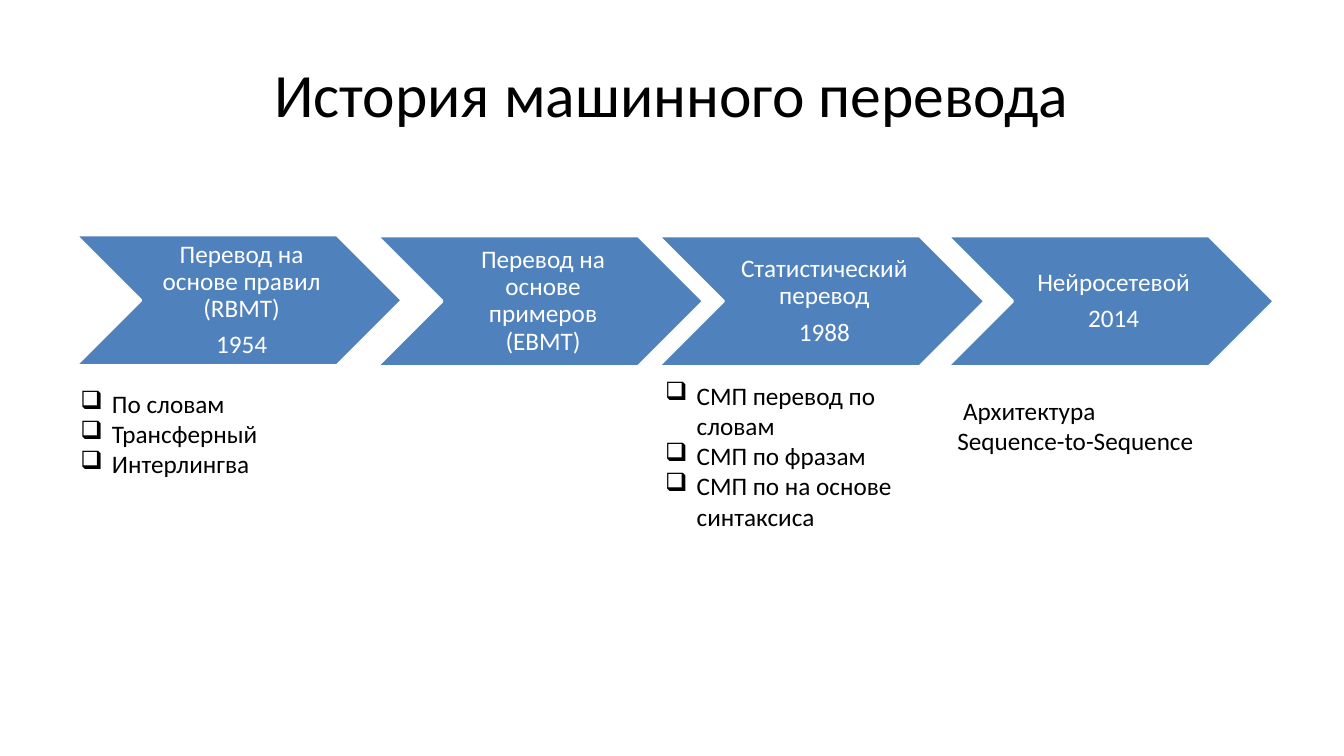
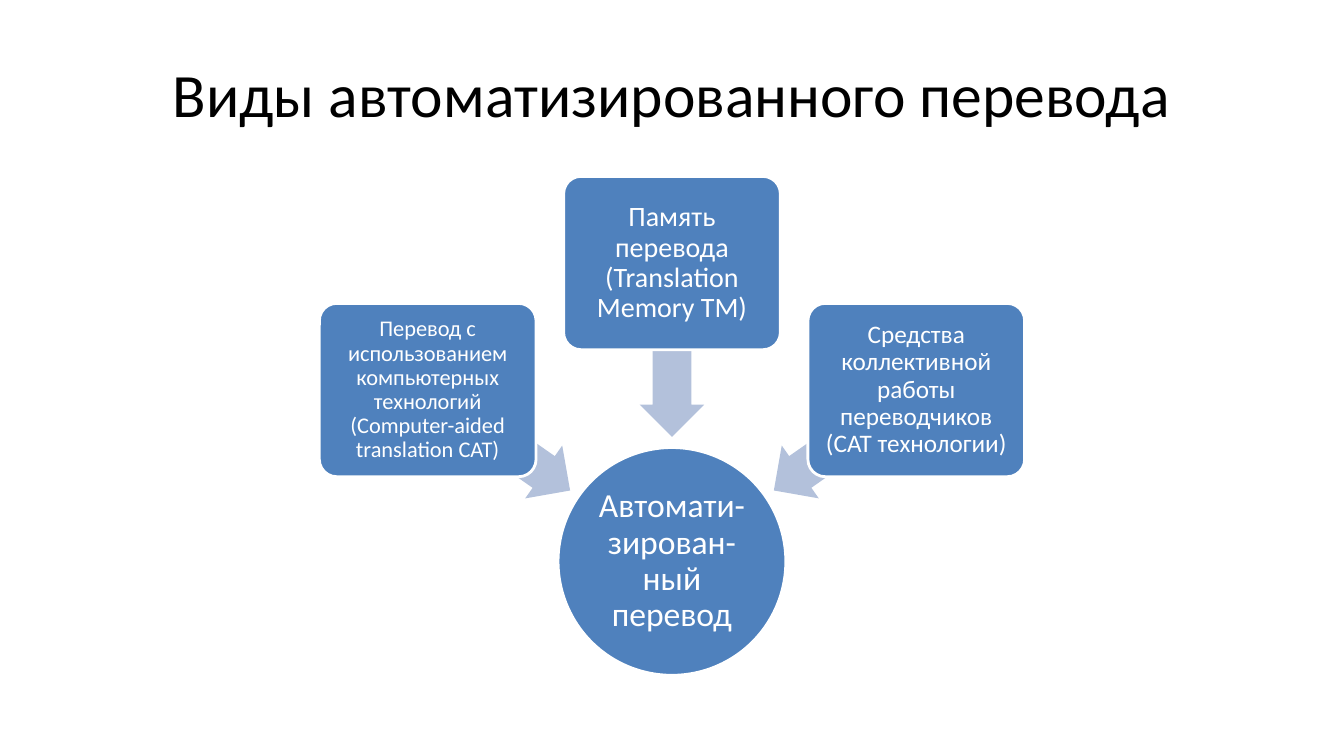
from lxml import etree
from pptx import Presentation
from pptx.dml.color import RGBColor
from pptx.enum import shapes, text
from pptx.oxml import ns
from pptx.util import Pt

BLUE = RGBColor(0x4F, 0x81, 0xBD)
PALE = RGBColor(0xB3, 0xC1, 0xDB)
WHITE = RGBColor(0xFF, 0xFF, 0xFF)
BLACK = RGBColor(0, 0, 0)
FONT = "Calibri"
KIND = shapes.MSO_SHAPE


class Deck:
    """Holds the shared style and the current slide."""

    def __init__(self):
        self.prs = Presentation()
        self.prs.slide_width, self.prs.slide_height = Pt(960), Pt(540)
        self.slide = None

    def start(self, title):
        self.slide = self.prs.slides.add_slide(self.prs.slide_layouts[5])
        head = self.slide.shapes.title
        head.left, head.top = Pt(48), Pt(21.6)
        head.width, head.height = Pt(864), Pt(90)
        head.text_frame.vertical_anchor = text.MSO_ANCHOR.MIDDLE
        self.label(head, [title], 44, BLACK, text.PP_ALIGN.CENTER)

    def label(self, shape, lines, size, color, align):
        frame = shape.text_frame
        frame.text = "\n".join(lines)
        frame.word_wrap = True
        for para in frame.paragraphs:
            para.alignment = align
            for run in para.runs:
                run.font.name, run.font.size = FONT, Pt(size)
                run.font.color.rgb = color

    def shape(self, kind, x, y, w, h, fill, adj=()):
        item = self.slide.shapes.add_shape(kind, Pt(x), Pt(y), Pt(w), Pt(h))
        item.shadow.inherit = False
        item.fill.solid()
        item.fill.fore_color.rgb = fill
        item.line.fill.background()
        for i, value in enumerate(adj):
            item.adjustments[i] = value
        return item

    def block(self, kind, x, y, w, h, lines, size, pad, left=None, adj=()):
        """Blue shape with a white edge and centred white text."""
        item = self.shape(kind, x, y, w, h, BLUE, adj)
        item.line.color.rgb = WHITE
        item.line.width = Pt(2)
        frame = item.text_frame
        frame.vertical_anchor = text.MSO_ANCHOR.MIDDLE
        frame.margin_left = Pt(pad if left is None else left)
        frame.margin_right = frame.margin_top = frame.margin_bottom = Pt(pad)
        self.label(item, lines, size, WHITE, text.PP_ALIGN.CENTER)
        for para in frame.paragraphs:
            para.line_spacing = 0.9
            para.space_after = Pt(0.35 * size)

    def arrow(self, mid, y, turn):
        w, h = 124.6, 46.1
        item = self.shape(KIND.LEFT_ARROW, mid - w / 2, y - h / 2, w, h,
                          PALE, (0.6, 0.5))
        item.rotation = turn

    def note(self, x, y, w, h, lines, mark=None):
        box = self.slide.shapes.add_textbox(Pt(x), Pt(y), Pt(w), Pt(h))
        self.label(box, lines, 18, BLACK, text.PP_ALIGN.LEFT)
        if mark:
            for para in box.text_frame.paragraphs:
                props = para._p.get_or_add_pPr()
                props.set("marL", str(Pt(22.5)))
                props.set("indent", str(-Pt(22.5)))
                etree.SubElement(props, ns.qn("a:buChar"), char=mark)


def history(deck):
    deck.start("История машинного перевода")
    # Timeline of chevrons
    steps = [
        (54, 167.8, ["Перевод на основе правил (RBMT)", "1954"]),
        (269.3, 168.5, ["Перевод на основе примеров (EBMT)"]),
        (470.2, 168.5, ["Статистический перевод", "1988"]),
        (676.8, 168.5, ["Нейросетевой", "2014"]),
    ]
    for x, y, lines in steps:
        deck.block(KIND.CHEVRON, x, y, 233.3, 93.3, lines, 18, 2, left=6)
    # Notes under the steps
    deck.note(468, 267.8, 188.6, 116.6,
              ["СМП перевод по словам", "СМП по фразам",
               "СМП по на основе синтаксиса"], "❑")
    deck.note(676.8, 278.6, 185.8, 51, [" Архитектура Sequence-to-Sequence"])
    deck.note(50.4, 273.6, 241.2, 94.3,
              ["По словам", "Трансферный", "Интерлингва"], "❑")


def kinds(deck):
    deck.start("Виды автоматизированного перевода")
    # Hub
    mid, size = 480, 162.7
    deck.block(KIND.OVAL, mid - size / 2, 319.7, size, size,
               ["Автомати-зирован- ный перевод"], 24, 1.5)
    # Branches: side, arrow height, turn, box top, text, size
    w, h = 154.8, 123.8
    parts = [
        (-1, 314.6, 215, 216.7, "Перевод с использованием компьютерных "
         "технологий (Computer-aided translation CAT)", 16),
        (0, 249.8, 270, 126, "Память перевода (Translation Memory TM)", 20),
        (1, 314.6, 325, 216.7, "Средства коллективной работы переводчиков "
         "(CAT технологии)", 18),
    ]
    for side, y, turn, top, words, size in parts:
        deck.arrow(mid + side * 123.8, y, turn)
        deck.block(KIND.ROUNDED_RECTANGLE, mid + side * 174.5 - w / 2, top,
                   w, h, [words], size, 2.5, adj=(0.1,))


def main():
    deck = Deck()
    history(deck)
    kinds(deck)
    deck.prs.save("out.pptx")


if __name__ == "__main__":
    main()
